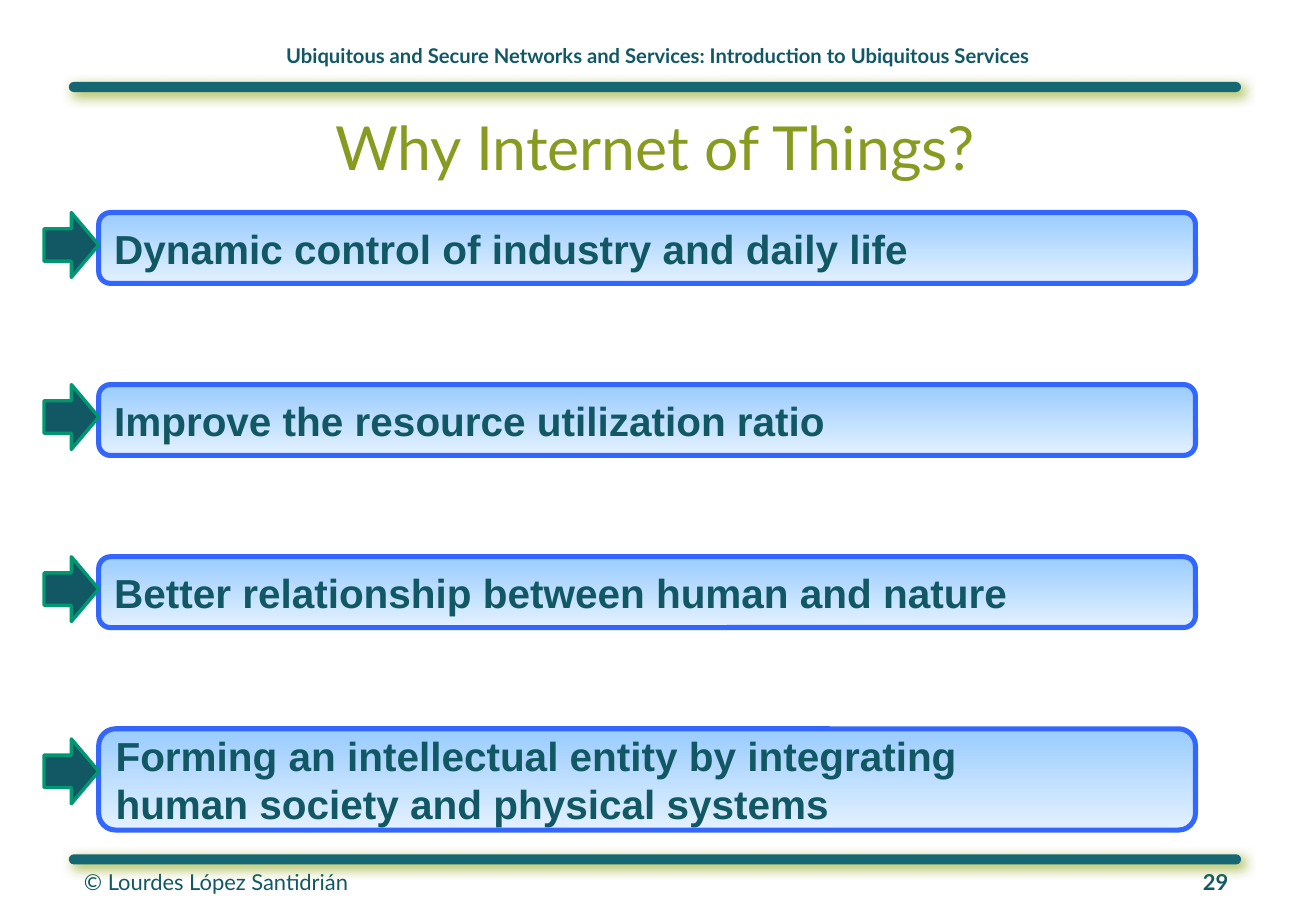
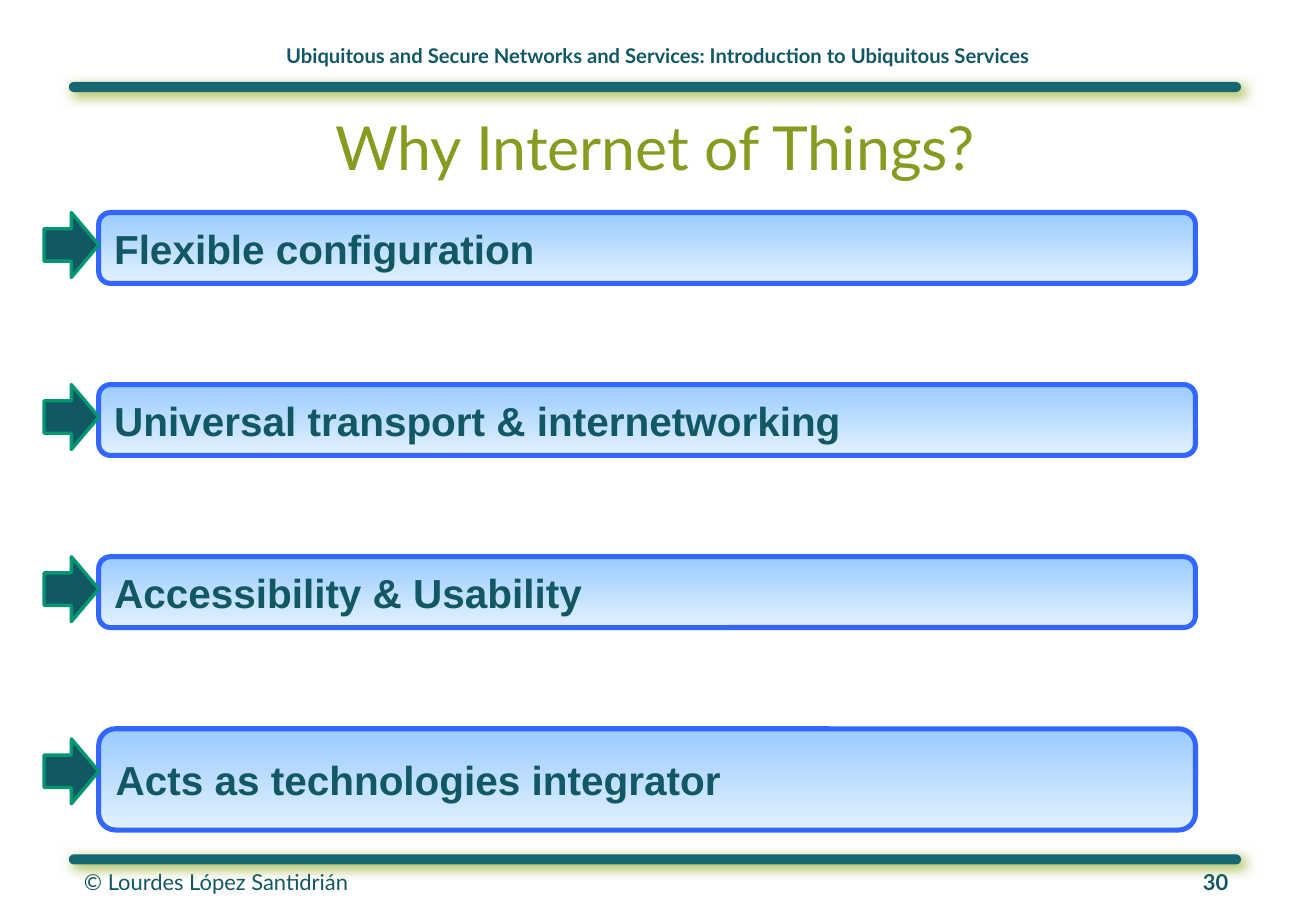
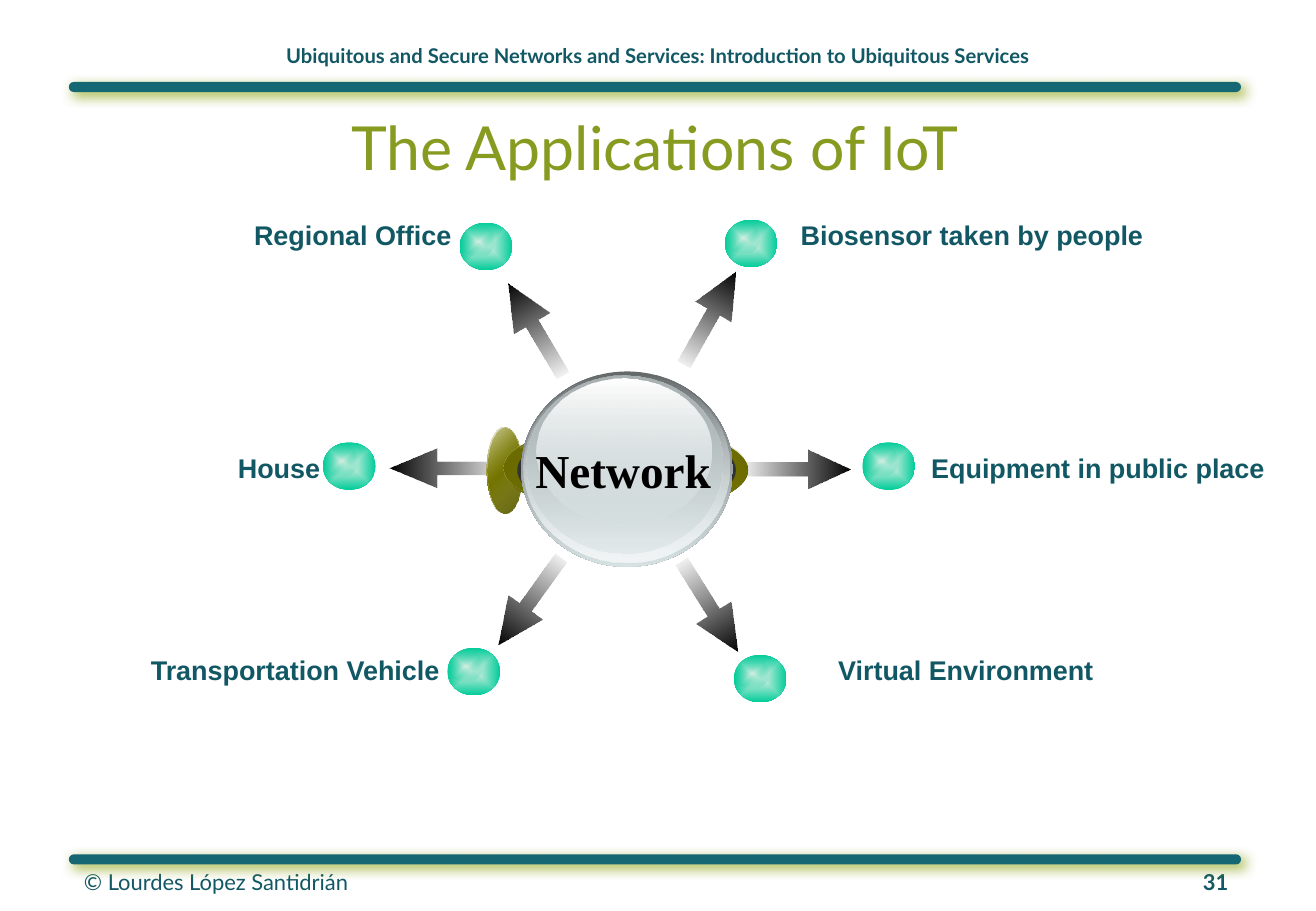
from pptx import Presentation
from pptx.dml.color import RGBColor
from pptx.enum.shapes import MSO_SHAPE
from pptx.enum.text import MSO_ANCHOR, PP_ALIGN
from pptx.oxml import parse_xml
from pptx.oxml.ns import nsdecls, qn
from pptx.util import Inches, Pt

COLS, ROWS, CELL = 130, 90, 1 / 12

INK = RGBColor(0x12, 0x58, 0x64)
BAND = RGBColor(0x15, 0x67, 0x74)
GLOW = RGBColor(0x95, 0xAA, 0x24)
OLIVE = RGBColor(0x87, 0x9B, 0x21)
GREEN = RGBColor(0x00, 0x97, 0x71)
BLUE = RGBColor(0x33, 0x66, 0xFF)
SKY = RGBColor(0x99, 0xCC, 0xFF)
PALE = RGBColor(0xE3, 0xF1, 0xFF)
BLACK = RGBColor(0x00, 0x00, 0x00)
WHITE = RGBColor(0xFF, 0xFF, 0xFF)
MINT = RGBColor(0xD5, 0xEF, 0xE3)
JADE = RGBColor(0x00, 0xCC, 0x99)
MOSS = RGBColor(0x80, 0x80, 0x00)
DARK = RGBColor(0x5C, 0x5C, 0x00)
EDGE = RGBColor(0x62, 0x62, 0x00)
RIM = RGBColor(0x69, 0x69, 0x00)
COAL = RGBColor(0x33, 0x33, 0x33)
STEEL = RGBColor(0x63, 0x68, 0x69)
GREY = RGBColor(0xAA, 0xB2, 0xB3)
MIST = RGBColor(0xD6, 0xE1, 0xE2)
HAZE = RGBColor(0xF1, 0xF5, 0xF5)

HEAD = "Ubiquitous and Secure Networks and Services: Introduction to Ubiquitous Services"
OWNER = "© Lourdes López Santidrián"

REASONS = [
    (29, ["Dynamic control of industry and daily life",
          "Improve the resource utilization ratio",
          "Better relationship between human and nature",
          "Forming an intellectual entity by integrating\nhuman society and physical systems"]),
    (30, ["Flexible configuration",
          "Universal transport & internetworking",
          "Accessibility & Usability",
          "Acts as technologies integrator"]),
]

NODES = [
    ("Regional Office", 23.9, 21, 22.2, 45.4, 22),
    ("House", 22.3, 44, 10.7, 31.9, 43.7),
    ("Transportation Vehicle", 13.7, 64, 31.3, 44.2, 64),
    ("Biosensor taken by people", 77.9, 21, 36.7, 71.6, 21.7),
    ("Equipment in public place", 90.8, 44, 35.8, 85.2, 43.7),
    ("Virtual Environment", 81.6, 64, 28, 72.5, 64.7),
]

SPOKES = [
    (70.1, 31.4, 10.45, 4.1, 299.6, 1.11),
    (70.1, 59.9, 10.45, 4.1, 57.8, 1.11),
    (52.9, 32.5, 10.45, 4.1, 239.5, 1.11),
    (52.3, 59.4, 10.45, 4.1, 125.6, 1.11),
    (78.4, 46.3, 11.3, 3.85, 0, 1.11),
    (44.6, 46.2, 12.2, 3.85, 180, 1.21),
]

HUB = [
    ((48.1, 42.2, 3.4, 8.5), [(0, WHITE, 100), (50, MOSS, 100), (100, WHITE, 100)], 45),
    ((48.2, 42.2, 3.4, 8.5), [(0, MOSS, 32), (100, DARK, 100)], 45),
    ((49.9, 42.2, 24, 8.5), [(0, EDGE, 100), (50, MOSS, 100), (100, EDGE, 100)], 315),
    ((49.7, 41.9, 24, 8.5), [(0, RIM, 100), (100, MOSS, 0)], 45),
    ((51.1, 42.2, 21.6, 8.5), COAL, 0),
    ((51.5, 36.7, 20.9, 19.3), [(0, STEEL, 100), (100, MIST, 100)], 90),
    ((51.7, 36.8, 20.4, 18.8), [(0, MIST, 0), (100, HAZE, 100)], 90),
    ((52, 37.1, 19.4, 17.6), [(0, GREY, 100), (100, MIST, 48)], 90),
    ((53, 37.4, 17.3, 14.3), [(0, WHITE, 100), (100, MIST, 38)], 90),
]


def cells(*box):
    return [Inches(n * CELL) for n in box]


class Deck:
    def __init__(self):
        self.file = Presentation()
        self.file.slide_width, self.file.slide_height = cells(COLS, ROWS)
        self.slide = None

    def page(self, title, number):
        self.slide = self.file.slides.add_slide(self.file.slide_layouts[5])
        self.footer(number)
        self.label(HEAD, (19.7, 4.3, 90.6, 2.4), 12, "Lato", align=PP_ALIGN.CENTER,
                   inset=(0, 0), anchor=MSO_ANCHOR.BOTTOM, wrap=True)
        for row in (8.1, 84.4):
            self.band(row)
        self.title(title)

    def title(self, text):
        shape = self.slide.shapes.title
        shape.left, shape.top, shape.width, shape.height = cells(6.25, 10.2, 116.9, 9.5)
        self.words(shape.text_frame, text, 36, "Lato", OLIVE, False, PP_ALIGN.CENTER)
        shape.text_frame.vertical_anchor = MSO_ANCHOR.TOP

    def footer(self, number):
        box = self.label(OWNER + "\t", (7.3, 85.3, 115.2, 3.6), 13, "Lato",
                         bold=False, inset=(1, 0.5), wrap=True)
        line = box.text_frame.paragraphs[0]
        line._p.get_or_add_pPr().append(parse_xml(
            f'<a:tabLst {nsdecls("a")}><a:tab pos="{Inches(9.42)}" algn="r"/></a:tabLst>'))
        run = line.add_run()
        run.text = str(number)
        self.style(run, 13, "Lato", INK, True)

    def band(self, row):
        bar = self.shape(MSO_SHAPE.ROUNDED_RECTANGLE, (6.8, row, 115.8, 1), BAND)
        bar.adjustments[0] = 0.5
        bar._element.spPr.find(qn("a:effectLst")).append(parse_xml(
            f'<a:outerShdw {nsdecls("a")} blurRad="{Pt(7)}" dist="{Pt(3)}" '
            f'dir="{45 * 60000}" algn="tl" rotWithShape="0"><a:srgbClr val="{GLOW}">'
            '<a:alpha val="90000"/></a:srgbClr></a:outerShdw>'))

    def style(self, run, size, face, color, bold):
        run.font.size = Pt(size)
        run.font.name = face
        run.font.bold = bold
        run.font.color.rgb = color

    def words(self, frame, text, size, face, color, bold, align):
        frame.text = text
        for line in frame.paragraphs:
            line.alignment = align
            for run in line.runs:
                self.style(run, size, face, color, bold)

    def label(self, text, box, size, face="Arial", color=INK, bold=True,
              align=PP_ALIGN.LEFT, inset=(1.2, 0.6), anchor=MSO_ANCHOR.TOP, wrap=False):
        shape = self.slide.shapes.add_textbox(*cells(*box))
        frame = shape.text_frame
        frame.word_wrap = wrap
        frame.vertical_anchor = anchor
        frame.margin_left, frame.margin_top = cells(*inset)
        frame.margin_right, frame.margin_bottom = cells(*inset)
        self.words(frame, text, size, face, color, bold, align)
        return shape

    def shape(self, kind, box, fill, angle=0, edge=None, width=0):
        shape = self.slide.shapes.add_shape(kind, *cells(*box))
        shape.shadow.inherit = False
        if isinstance(fill, RGBColor):
            shape.fill.solid()
            shape.fill.fore_color.rgb = fill
        else:
            self.blend(shape, fill, angle)
        if edge is None:
            shape.line.fill.background()
        else:
            shape.line.color.rgb = edge
            shape.line.width = Pt(width)
        return shape

    def blend(self, shape, stops, angle):
        marks = "".join(
            f'<a:gs pos="{pos * 1000}"><a:srgbClr val="{color}">'
            f'<a:alpha val="{alpha * 1000}"/></a:srgbClr></a:gs>'
            for pos, color, alpha in stops)
        if angle is None:
            way = ('<a:path path="shape"><a:fillToRect l="50000" t="50000" '
                   'r="50000" b="50000"/></a:path>')
        else:
            way = f'<a:lin ang="{angle * 60000}" scaled="1"/>'
        shape.fill.background()
        props = shape._element.spPr
        props.replace(props.find(qn("a:noFill")), parse_xml(
            f'<a:gradFill {nsdecls("a")} rotWithShape="1">'
            f'<a:gsLst>{marks}</a:gsLst>{way}</a:gradFill>'))

    def reason(self, text, row, height, shift):
        bar = self.shape(MSO_SHAPE.ROUNDED_RECTANGLE, (9.75, row, 108.35, height),
                         [(0, SKY, 100), (100, PALE, 100)], 90, BLUE, 3)
        frame = bar.text_frame
        frame.word_wrap = True
        frame.vertical_anchor = MSO_ANCHOR.MIDDLE
        self.words(frame, text, 24, "Arial", INK, True, PP_ALIGN.LEFT)
        self.shape(MSO_SHAPE.RIGHT_ARROW, (4.35, row + shift, 5.4, 6.4), INK,
                   edge=GREEN, width=2)

    def spoke(self, col, row, width, height, turn, tip):
        arrow = self.shape(MSO_SHAPE.RIGHT_ARROW,
                           (col - width / 2, row - height / 2, width, height),
                           [(0, BLACK, 0), (100, BLACK, 100)])
        arrow.rotation = turn
        arrow.adjustments[0] = 0.35
        arrow.adjustments[1] = tip

    def oval(self, box, fill, angle=None):
        self.shape(MSO_SHAPE.OVAL, box, fill, angle)

    def dot(self, col, row):
        self.oval((col, row, 5.2, 4.7), [(0, MINT, 100), (100, JADE, 100)])
        self.oval((col + 0.25, row + 0.35, 3.2, 3), [(0, MINT, 100), (100, JADE, 0)])


def main():
    deck = Deck()
    for number, texts in REASONS:
        deck.page("Why Internet of Things?", number)
        for step, text in enumerate(texts):
            last = step == len(texts) - 1
            deck.reason(text, 21 + 17 * step, 10 if last else 7, 1 if last else 0)

    deck.page("The Applications of IoT", 31)
    for spoke in SPOKES:
        deck.spoke(*spoke)
    for *_, col, row in NODES:
        deck.dot(col, row)
    for part in HUB:
        deck.oval(*part)
    deck.label("Network", (51.6, 43, 19.9, 6.8), 28, "Times New Roman", BLACK,
               align=PP_ALIGN.CENTER)
    for text, col, row, width, *_ in NODES:
        deck.label(text, (col, row, width, 4.4), 16)

    deck.file.save("out.pptx")


if __name__ == "__main__":
    main()
